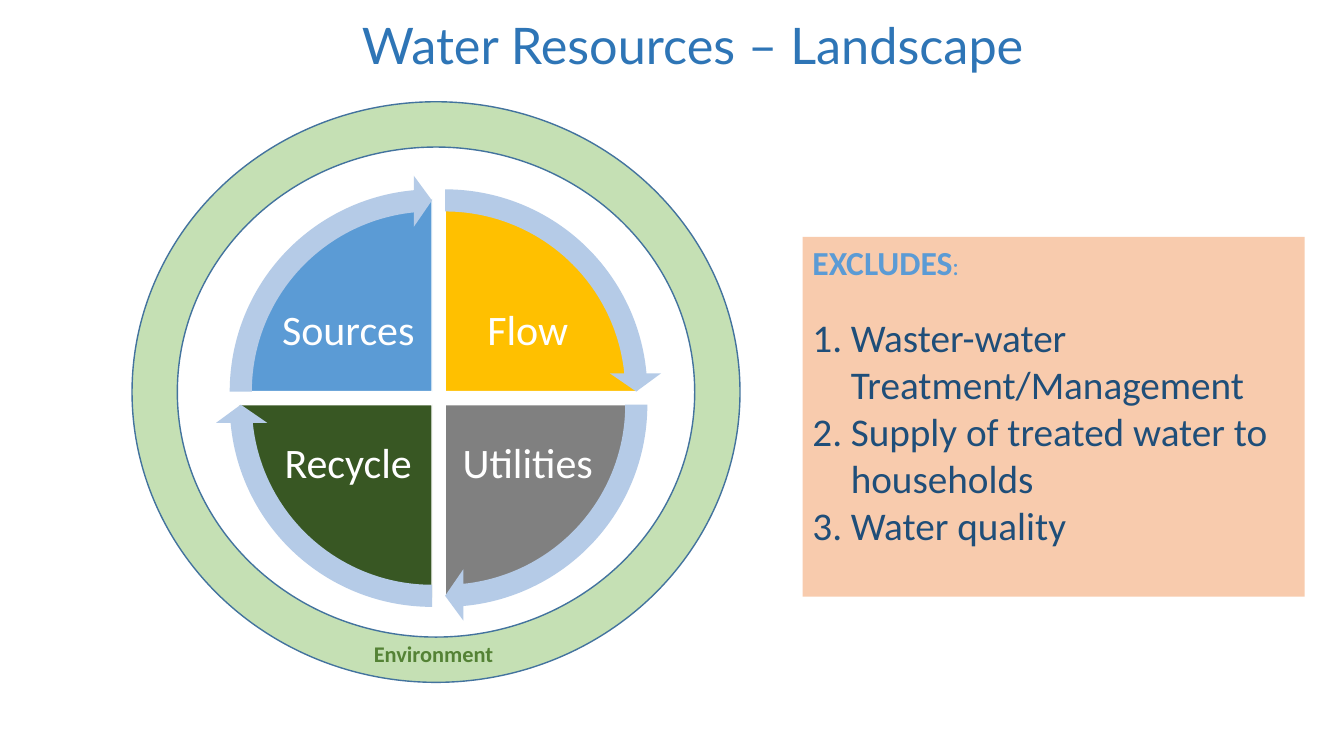
from dataclasses import dataclass

from lxml import etree
from pptx import Presentation
from pptx.dml.color import RGBColor
from pptx.enum.shapes import MSO_SHAPE
from pptx.enum.text import MSO_ANCHOR, MSO_AUTO_SIZE, PP_ALIGN
from pptx.oxml.ns import qn
from pptx.util import Inches, Pt

PIE, ARROW = MSO_SHAPE.PIE, MSO_SHAPE.CIRCULAR_ARROW
DONUT, RECTANGLE = MSO_SHAPE.DONUT, MSO_SHAPE.RECTANGLE
TOP, MIDDLE = MSO_ANCHOR.TOP, MSO_ANCHOR.MIDDLE
LEFT, CENTER = PP_ALIGN.LEFT, PP_ALIGN.CENTER

TITLE = "Water Resources – Landscape"
RING_LABEL = "Environment"
# label, fill, column, row, start angle
QUADRANTS = [
    ("Flow", "FFC000", 1, 0, 162),
    ("Utilities", "808080", 1, 1, 0),
    ("Recycle", "385723", 0, 1, 54),
    ("Sources", "5B9BD5", 0, 0, 108),
]
EXCLUDES_HEADING = "EXCLUDES"
EXCLUSIONS = [
    "Waster-water Treatment/Management",
    "Supply of treated water to households",
    "Water quality",
]


@dataclass(frozen=True)
class Theme:
    title_font: str = "Lato"
    body_font: str = "Calibri"
    title: str = "2E75B6"
    white: str = "FFFFFF"
    arrow: str = "B5CBE7"
    ring: str = "C5E0B4"
    ring_line: str = "43739E"
    ring_text: str = "548235"
    panel: str = "F8CBAD"
    heading: str = "5B9BD5"
    item: str = "1F4E79"
    title_size: int = 36
    quadrant_size: int = 30
    item_size: int = 28
    heading_size: int = 24
    colon_size: int = 18
    ring_size: int = 16


THEME = Theme()
# Angles in the unit of shape.adjustments: 54 is a quarter turn
QUARTER_TURN, ARROW_HEAD = 54, 3.275
CYCLE_LEFT, CYCLE_TOP, QUADRANT_GAP = 2.37, 1.97, 0.13
PIE_SIZE, ARROW_SIZE = 3.83, 4.3
LABEL_LEFT, LABEL_TOP, LABEL_STEP_X, LABEL_STEP_Y = 2.75, 2.77, 1.78, 1.32


def style_font(font, size, color, name=THEME.body_font, bold=False):
    font.name, font.size, font.bold = name, Pt(size), bold
    font.color.rgb = RGBColor.from_string(color)


def add_shape(slide, kind, box, fill, line=None, adjustments=()):
    shape = slide.shapes.add_shape(kind, *map(Inches, box))
    shape.shadow.inherit = False
    shape.fill.solid()
    shape.fill.fore_color.rgb = RGBColor.from_string(fill)
    if line:
        shape.line.color.rgb = RGBColor.from_string(line)
        shape.line.width = Pt(1)
    else:
        shape.line.fill.background()
    for index, value in enumerate(adjustments):
        shape.adjustments[index] = value
    return shape


def add_label(slide, text, box, size, color, bold=False):
    frame = slide.shapes.add_textbox(*map(Inches, box)).text_frame
    frame.word_wrap = True
    frame.text = text
    style_font(frame.paragraphs[0].font, size, color, bold=bold)
    return frame


def add_title(slide):
    title = slide.shapes.title
    title.left, title.top, title.width, title.height = map(Inches, (1.12, 0, 11.5, 0.95))
    frame = title.text_frame
    frame.text = TITLE
    frame.auto_size = MSO_AUTO_SIZE.NONE
    frame.vertical_anchor = MIDDLE
    paragraph = frame.paragraphs[0]
    paragraph.alignment, paragraph.line_spacing = CENTER, 0.9
    style_font(paragraph.font, THEME.title_size, THEME.title, THEME.title_font)


def add_cycle(slide):
    for label, fill, column, row, start in QUADRANTS:
        left = CYCLE_LEFT + column * QUADRANT_GAP
        # The lower half is moved down by the same gap
        top = CYCLE_TOP + row * QUADRANT_GAP
        add_shape(slide, PIE, (left, top, PIE_SIZE, PIE_SIZE), fill, THEME.white,
                  (start, (start + QUARTER_TURN) % (4 * QUARTER_TURN)))
        box = (LABEL_LEFT + column * LABEL_STEP_X, LABEL_TOP + row * LABEL_STEP_Y, 1.41, 1.05)
        frame = add_label(slide, label, box, THEME.quadrant_size, THEME.white)
        frame.margin_left = frame.margin_right = Inches(0.04)
        frame.margin_top = frame.margin_bottom = Inches(0.04)
        frame.vertical_anchor = MIDDLE
        frame.paragraphs[0].alignment = CENTER
        frame.paragraphs[0].line_spacing = 0.9

    offset = (ARROW_SIZE - PIE_SIZE) / 2
    for _, _, column, row, start in QUADRANTS:
        left = CYCLE_LEFT + column * QUADRANT_GAP - offset
        top = CYCLE_TOP + row * QUADRANT_GAP - offset
        add_shape(slide, ARROW, (left, top, ARROW_SIZE, ARROW_SIZE), THEME.arrow,
                  adjustments=(0.051, ARROW_HEAD, start + QUARTER_TURN - ARROW_HEAD, start, 0.059))


def add_environment_ring(slide):
    add_shape(slide, DONUT, (1.31, 1.01, 6.03, 5.76), THEME.ring, THEME.ring_line, (0.078,))
    add_label(slide, RING_LABEL, (3.61, 6.3, 1.61, 0.37), THEME.ring_size,
              THEME.ring_text, bold=True)


def number_paragraph(paragraph):
    properties = paragraph._p.get_or_add_pPr()
    properties.set("marL", str(Inches(0.38)))
    properties.set("indent", str(Inches(-0.38)))
    etree.SubElement(properties, qn("a:buFont"), typeface="+mj-lt")
    etree.SubElement(properties, qn("a:buAutoNum"), type="arabicPeriod")


def add_exclusions(slide):
    frame = add_shape(slide, RECTANGLE, (7.96, 2.35, 4.98, 3.57), THEME.panel).text_frame
    frame.word_wrap, frame.vertical_anchor = True, TOP
    heading = frame.paragraphs[0]
    heading.alignment, heading.space_after = LEFT, Pt(22)
    for text, size, bold in ((EXCLUDES_HEADING, THEME.heading_size, True),
                             (":", THEME.colon_size, False)):
        run = heading.add_run()
        run.text = text
        style_font(run.font, size, THEME.heading, bold=bold)
    for text in EXCLUSIONS:
        paragraph = frame.add_paragraph()
        paragraph.text, paragraph.alignment = text, LEFT
        number_paragraph(paragraph)
        style_font(paragraph.font, THEME.item_size, THEME.item)


def main():
    presentation = Presentation()
    presentation.slide_width, presentation.slide_height = Inches(13.33), Inches(7.5)
    slide = presentation.slides.add_slide(presentation.slide_layouts[5])
    add_cycle(slide)
    add_title(slide)
    add_environment_ring(slide)
    add_exclusions(slide)
    presentation.save("out.pptx")


if __name__ == "__main__":
    main()
